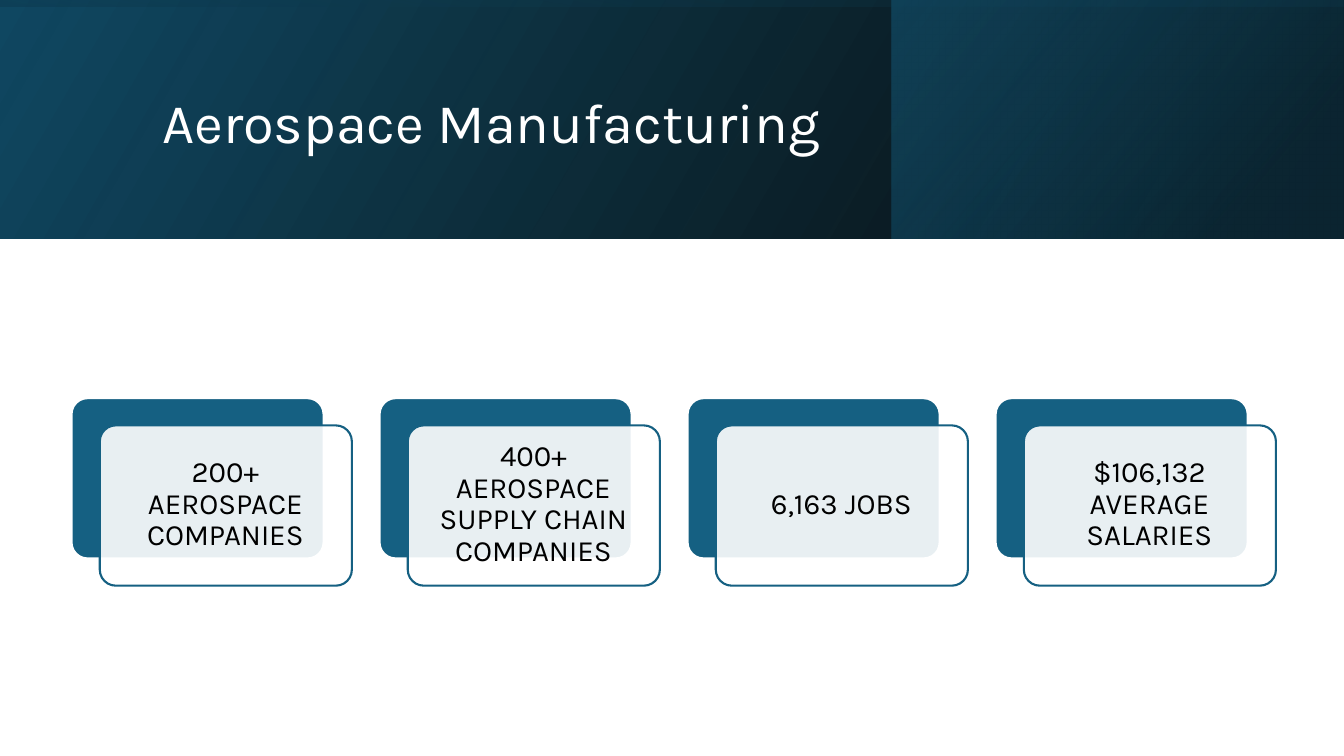
from lxml import etree
from pptx import Presentation
from pptx.dml.color import RGBColor
from pptx.enum.shapes import MSO_SHAPE
from pptx.enum.text import MSO_ANCHOR, PP_ALIGN
from pptx.oxml.ns import qn
from pptx.util import Inches, Pt

RECT, ROUNDED = MSO_SHAPE.RECTANGLE, MSO_SHAPE.ROUNDED_RECTANGLE
MIDDLE = MSO_ANCHOR.MIDDLE
LEFT, CENTER = PP_ALIGN.LEFT, PP_ALIGN.CENTER
FONT = "Karla"
TEAL, WHITE, BLACK = "156082", "FFFFFF", "000000"

# Each band: box, rotation, gradient angle, stops of (position, colour, opacity)
HEADER_BANDS = [
    ((0, 0, 13.33, 2.37), 0, 330, [(0, BLACK, 96), (100, "104862", 100)]),
    ((8.84, 0, 4.48, 2.37), 0, 320, [(19, "0B3041", 68), (100, TEAL, 48)]),
    ((5.48, -5.48, 2.37, 13.33), 270, 350, [(23, "104862", 16), (99, BLACK, 45)]),
]
# The first band's teal end keeps the same opacity as its black end
HEADER_BANDS[0][3][1] = (100, "104862", 100)

FACTS = [
    "200+ AEROSPACE COMPANIES",
    "400+ AEROSPACE SUPPLY CHAIN COMPANIES",
    "6,163 JOBS",
    "$106,132 AVERAGE SALARIES",
]
CARD_LEFT, CARD_TOP, CARD_PITCH = 0.71, 3.95, 3.055
CARD_WIDTH, CARD_HEIGHT = 2.5, 1.59


def rgb(hex_colour):
    return RGBColor.from_string(hex_colour)


def inches(box):
    return [Inches(length) for length in box]


def set_opacity(colour, percent):
    etree.SubElement(colour, qn("a:alpha")).set("val", str(percent * 1000))


def add_band(slide, box, rotation, angle, stops):
    band = slide.shapes.add_shape(RECT, *inches(box))
    band.shadow.inherit = False
    band.rotation = rotation
    band.line.fill.background()
    band.fill.gradient()
    properties = band.element.spPr
    properties.find(qn("a:xfrm")).set("flipH", "1")

    # Replace the preset gradient with the band's own stops
    gradient = properties.find(qn("a:gradFill"))
    for child in list(gradient):
        gradient.remove(child)
    stop_list = etree.SubElement(gradient, qn("a:gsLst"))
    for position, hex_colour, opacity in stops:
        stop = etree.SubElement(stop_list, qn("a:gs"))
        stop.set("pos", str(position * 1000))
        colour = etree.SubElement(stop, qn("a:srgbClr"))
        colour.set("val", hex_colour)
        set_opacity(colour, opacity)
    direction = etree.SubElement(gradient, qn("a:lin"))
    direction.set("ang", str(angle * 60000))
    direction.set("scaled", "0")


def write_text(frame, text, size, hex_colour, alignment, inset):
    frame_format = {
        "word_wrap": True,
        "vertical_anchor": MIDDLE,
        "margin_left": Inches(inset),
        "margin_right": Inches(inset),
    }
    for name, value in frame_format.items():
        setattr(frame, name, value)
    paragraph = frame.paragraphs[0]
    paragraph.alignment = alignment
    paragraph.line_spacing = 0.9
    run = paragraph.add_run()
    run.text = text
    for name, value in {"name": FONT, "size": Pt(size)}.items():
        setattr(run.font, name, value)
    run.font.color.rgb = rgb(hex_colour)


def add_title(slide, text):
    title = slide.shapes.title
    placement = dict(zip(("left", "top", "width", "height"),
                         inches((1.51, 0.38, 10.63, 1.72))))
    for name, value in placement.items():
        setattr(title, name, value)
    write_text(title.text_frame, text, 40, WHITE, LEFT, 0.1)
    # Bring the title in front of the header bands
    slide.shapes.element.append(title.element)


def add_panel(group, left, top, fill, outline):
    panel = group.shapes.add_shape(
        ROUNDED, *inches((left, top, CARD_WIDTH, CARD_HEIGHT)))
    panel.shadow.inherit = False
    panel.adjustments[0] = 0.1
    panel.fill.solid()
    panel.fill.fore_color.rgb = rgb(fill)
    panel.line.color.rgb = rgb(outline)
    panel.line.width = Pt(1.5)
    return panel


def add_card(group, left, fact):
    add_panel(group, left, CARD_TOP, TEAL, WHITE)
    front = add_panel(group, left + 0.28, CARD_TOP + 0.27, WHITE, TEAL)
    fill = front.element.spPr.find(qn("a:solidFill"))
    set_opacity(fill.find(qn("a:srgbClr")), 90)
    label = group.shapes.add_textbox(
        *inches((left + 0.32, CARD_TOP + 0.31, 2.41, 1.49)))
    write_text(label.text_frame, fact, 21, BLACK, CENTER, 0.09)
    label.text_frame.margin_top = label.text_frame.margin_bottom = Inches(0.09)


def main():
    presentation = Presentation()
    presentation.slide_width = Inches(13.33)
    presentation.slide_height = Inches(7.5)
    slide = presentation.slides.add_slide(presentation.slide_layouts[5])

    # Header
    for band in HEADER_BANDS:
        add_band(slide, *band)
    add_title(slide, "Aerospace Manufacturing")

    # Row of fact cards
    cards = slide.shapes.add_group_shape()
    for index, fact in enumerate(FACTS):
        add_card(cards, CARD_LEFT + index * CARD_PITCH, fact)

    presentation.save("out.pptx")


if __name__ == "__main__":
    main()
